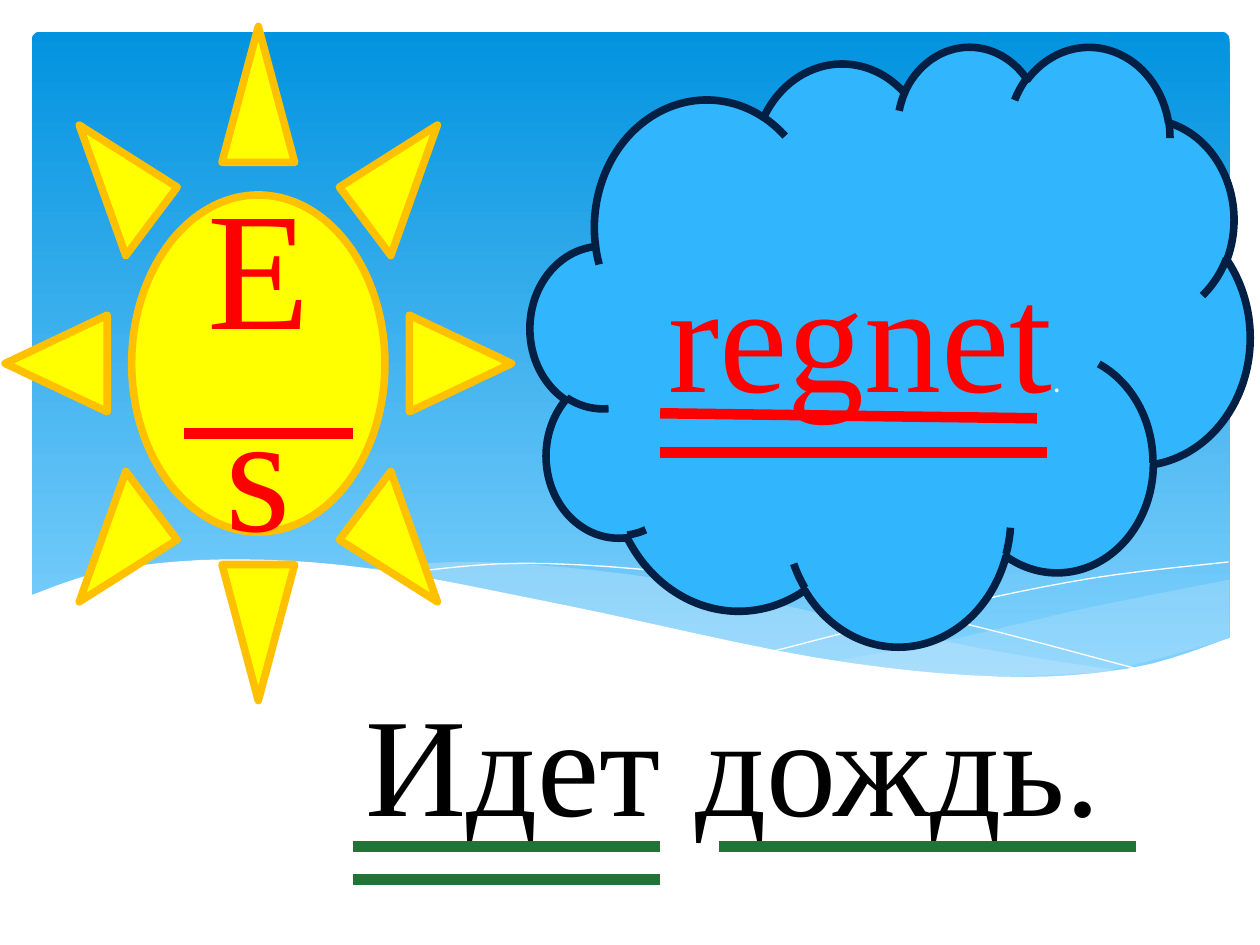
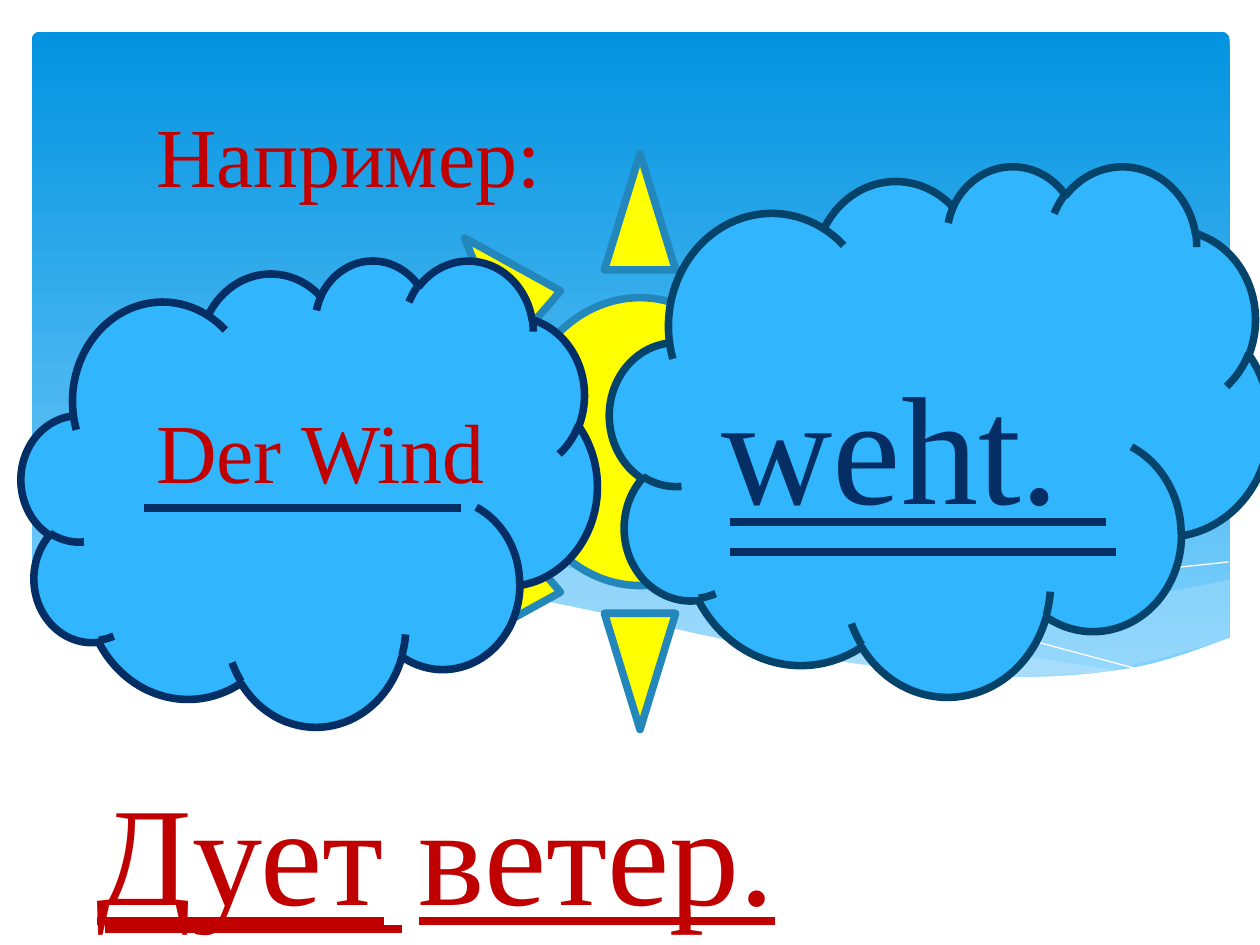
from dataclasses import dataclass
from lxml import etree
from pptx import Presentation
from pptx.dml.color import RGBColor as Rgb
from pptx.enum.shapes import MSO_CONNECTOR as Link, MSO_SHAPE as Kind
from pptx.enum.text import MSO_ANCHOR as Anchor, MSO_AUTO_SIZE as Fit, PP_ALIGN as Align
from pptx.oxml.ns import qn
from pptx.util import Inches, Pt


@dataclass(frozen=True)
class Theme:
    font: str = "Times New Roman"
    top: str = "0293E0"
    base: str = "83D3FE"
    mist: str = "C6E7FC"
    white: str = "FFFFFF"
    black: str = "000000"
    sun: str = "FFFF00"
    gold: str = "FFC000"
    steel: str = "2487BB"
    cloud: str = "31B6FD"
    night: str = "041F44"
    navy: str = "052E65"
    teal: str = "06436B"
    red: str = "FF0000"
    ruby: str = "C00000"
    green: str = "217436"
    tiny: int = 18
    small: int = 48
    big: int = 80
    large: int = 88
    huge: int = 96
    edge: float = 4.33
    thin: float = 4.5
    thick: float = 6


T = Theme()

PANEL = (0.25, 0.25, 9.51, 5.18)
STEPS = 6
WAVES = [
    dict(fill=T.mist, alpha=29, strands=[
        [(9.76, 4.6), (8.61, 4.83), (7.53, 5.08), (6.61, 5.25)],
        [(6.61, 5.25), (7.57, 5.36), (8.63, 5.35), (9.76, 5.07)]]),
    dict(fill=T.mist, alpha=40, strands=[
        [(8.93, 5.33), (7.75, 5.14), (6.29, 4.82), (5.14, 4.58), (3.8, 4.46), (2.86, 4.52)],
        [(2.86, 4.52), (4.49, 4.82), (6.01, 5.15), (7.48, 5.36), (8.93, 5.33)]]),
    dict(line=T.white, strands=[
        [(3.09, 4.56), (4.16, 4.47), (5.56, 4.57), (7.27, 4.86), (9.07, 5.32)]]),
    dict(line=T.white, strands=[
        [(6.13, 5.17), (7.48, 4.83), (8.66, 4.59), (9.75, 4.46)]]),
    dict(fill=T.white, strands=[
        [(9.77, 5.06), (8.99, 5.3), (7.93, 5.37), (6.48, 5.22), (4.47, 4.8),
         (2.92, 4.51), (1.77, 4.44), (0.85, 4.53), (0.23, 4.73)],
        [(0.23, 5.89), (9.77, 5.89)]]),
]

SLIDES = [
    [
        ("shape", Kind.SUN, (0.04, 0.21, 4.02, 5.35), T.sun, T.gold, [("Es", T.huge, T.red)]),
        ("shape", Kind.CLOUD, (4.21, 0.36, 5.71, 4.76), T.cloud, T.night,
         [("regnet", T.large, T.red), (".", T.tiny, T.white)]),
        ("rule", (1.46, 2.8), 3.44, T.red, T.thick),
        ("rule", (5.24, 8.23), 3.28, T.red, T.thick, 0.04),
        ("rule", (5.24, 8.31), 3.59, T.red, T.thick),
        ("title", (2.8, 5.32, 6.38, 1.45), [("Идет дождь.", T.big, T.black)]),
        ("rule", (5.71, 9.02), 6.72, T.green, T.thick),
        ("rule", (2.8, 5.24), 6.72, T.green, T.thick),
        ("rule", (2.8, 5.24), 6.98, T.green, T.thick),
    ],
    [
        ("title", (1.14, 0.77, 6.22, 0.91), [("Например:", T.small, T.ruby)]),
        ("shape", Kind.SUN, (3.11, 1.22, 3.94, 4.57), T.sun, T.steel, []),
        ("shape", Kind.CLOUD, (4.84, 1.31, 5.24, 4.21), T.cloud, T.teal, []),
        ("shape", Kind.CLOUD, (0.17, 2.06, 4.57, 3.7), T.cloud, T.navy, []),
        ("label", (1.14, 3.12, 2.83, 0.91), [("Der Wind", T.small, T.ruby)]),
        ("label", (5.63, 2.73, 3.39, 1.58), [("weht.", T.large, T.navy)]),
        ("rule", (1.14, 3.66), 4.03, T.navy, T.thin),
        ("rule", (5.79, 8.78), 4.14, T.navy, T.thin),
        ("rule", (5.79, 8.86), 4.38, T.navy, T.thin),
        ("label", (0.67, 6.03, 8.35, 1.45),
         [("Дует", T.big, T.ruby, True), (" ", T.big, T.black), ("ветер.", T.big, T.ruby, True)]),
        ("rule", (0.83, 3.19), 7.37, T.ruby, T.thin),
    ],
]


def scale(nums):
    return [Inches(n) for n in nums]


def paint(shape, fill=None, line=None, width=0):
    shape.shadow.inherit = False
    if fill:
        shape.fill.solid()
        shape.fill.fore_color.rgb = Rgb.from_string(fill)
    else:
        shape.fill.background()
    if line:
        shape.line.color.rgb = Rgb.from_string(line)
        shape.line.width = Pt(width)
    else:
        shape.line.fill.background()


def write(frame, parts, align):
    para = frame.paragraphs[0]
    para.alignment = align
    for text, size, color, *under in parts:
        run = para.add_run()
        run.text = text
        font = run.font
        font.size = Pt(size)
        font.color.rgb = Rgb.from_string(color)
        if size != T.tiny:
            font.name = T.font
        if under:
            font.underline = True


def settle(frame, parts):
    frame.word_wrap = True
    frame.auto_size = Fit.NONE
    frame.vertical_anchor = Anchor.TOP
    write(frame, parts, Align.LEFT)


def add_form(slide, kind, box, fill, line, parts):
    shape = slide.shapes.add_shape(kind, *scale(box))
    paint(shape, fill, line, T.edge)
    if parts:
        shape.text_frame.vertical_anchor = Anchor.MIDDLE
        write(shape.text_frame, parts, Align.CENTER)


def add_rule(slide, span, y, color, width, drop=0):
    left, right = span
    ends = scale((left, y, right, y + drop))
    rule = slide.shapes.add_connector(Link.STRAIGHT, *ends)
    rule.line.color.rgb = Rgb.from_string(color)
    rule.line.width = Pt(width)
    etree.SubElement(rule._element.spPr, qn("a:effectLst"))


def add_label(slide, box, parts):
    settle(slide.shapes.add_textbox(*scale(box)).text_frame, parts)


def add_title(slide, box, parts):
    title = slide.shapes.title
    title.left, title.top, title.width, title.height = scale(box)
    settle(title.text_frame, parts)
    slide.shapes._spTree.append(title._element)


def blend(a, b, c, d, t):
    bend = (c - a) * t + (2 * a - 5 * b + 4 * c - d) * t ** 2
    return b + (bend + (3 * b - a - 3 * c + d) * t ** 3) / 2


def smooth(knots):
    ends = [knots[0], *knots, knots[-1]]
    dots = [knots[0]]
    for quad in zip(ends, ends[1:], ends[2:], ends[3:]):
        for step in range(1, STEPS + 1):
            dots.append(tuple(blend(*axis, step / STEPS) for axis in zip(*quad)))
    return dots


def add_wave(slide, strands, fill=None, line=None, alpha=None):
    first, *rest = [scale(dot) for knots in strands for dot in smooth(knots)]
    pen = slide.shapes.build_freeform(*first)
    pen.add_line_segments(rest, close=bool(fill))
    wave = pen.convert_to_shape()
    paint(wave, fill, line)
    if alpha:
        tint = wave._element.spPr.find(".//" + qn("a:srgbClr"))
        etree.SubElement(tint, qn("a:alpha"), val=str(alpha * 1000))


def add_sky(slide):
    panel = slide.shapes.add_shape(Kind.ROUNDED_RECTANGLE, *scale(PANEL))
    paint(panel)
    panel.adjustments[0] = 0.013
    panel.fill.gradient()
    panel.fill.gradient_angle = 270
    for stop, color in zip(panel.fill.gradient_stops, (T.top, T.base)):
        stop.color.rgb = Rgb.from_string(color)
    for wave in WAVES:
        add_wave(slide, **wave)


DRAW = dict(shape=add_form, rule=add_rule, label=add_label, title=add_title)


def main():
    deck = Presentation()
    deck.slide_width, deck.slide_height = scale((10, 7.5))
    for items in SLIDES:
        slide = deck.slides.add_slide(deck.slide_layouts[5])
        add_sky(slide)
        for name, *args in items:
            DRAW[name](slide, *args)
    deck.save("out.pptx")


if __name__ == "__main__":
    main()
